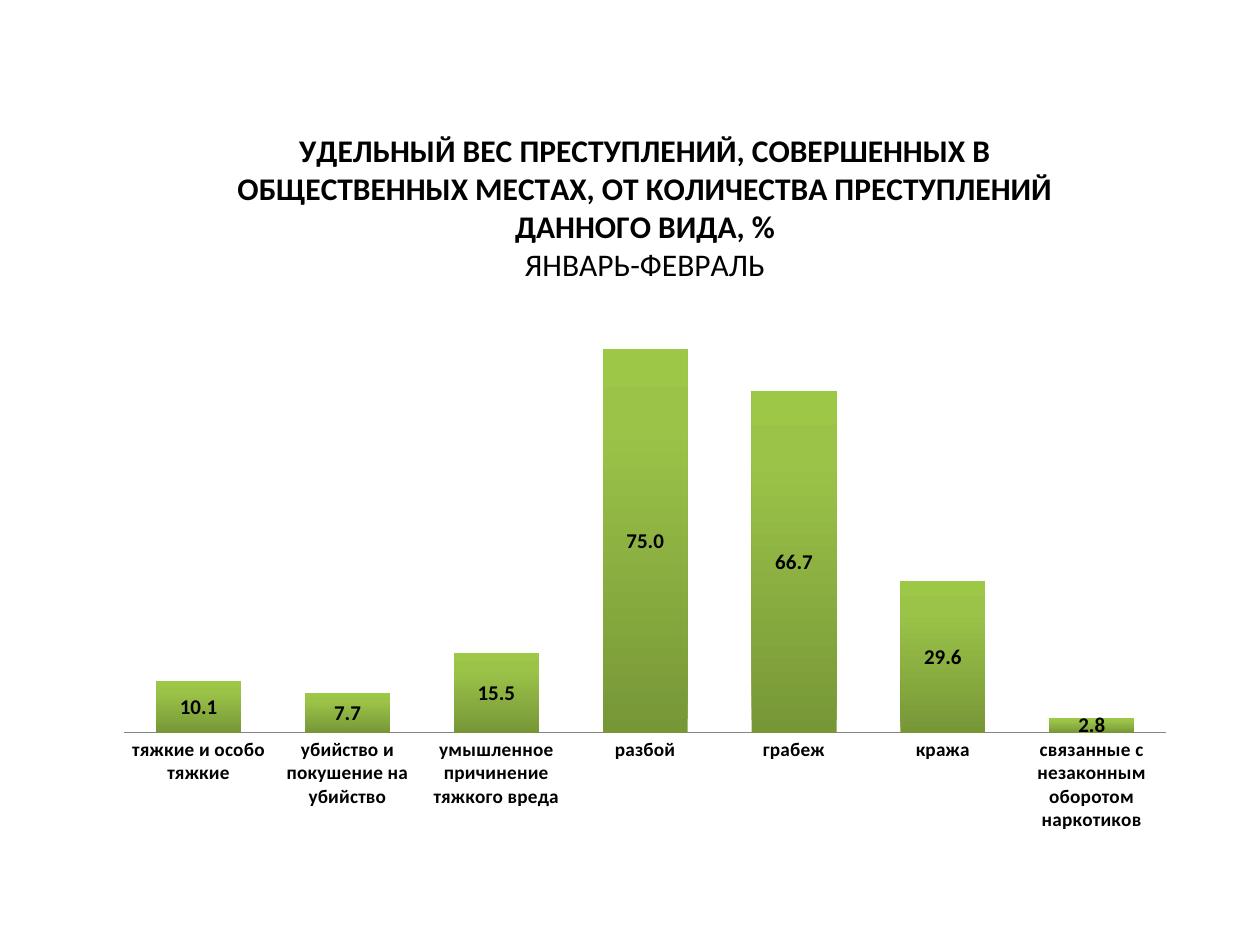
"""Build a slide charting the share of crimes committed in public places."""
import copy
import dataclasses
import typing

import lxml.etree
import pptx
import pptx.chart.chart
import pptx.chart.data
import pptx.chart.series
import pptx.dml.color
import pptx.enum.chart
import pptx.enum.text
import pptx.oxml.ns
import pptx.util

PX = 914400 / 126
FONT = "Calibri"
BLACK = pptx.dml.color.RGBColor(0x00, 0x00, 0x00)
AXIS_GRAY = pptx.dml.color.RGBColor(0x86, 0x86, 0x86)
GREEN_STOPS = (
    (0.0, pptx.dml.color.RGBColor(0x77, 0x97, 0x37)),
    (0.8, pptx.dml.color.RGBColor(0x9B, 0xC3, 0x48)),
    (1.0, pptx.dml.color.RGBColor(0x9D, 0xC7, 0x46)),
)


@dataclasses.dataclass(frozen=True)
class Crime:
    name: str
    share: float


CRIMES = (
    Crime("тяжкие и особо тяжкие", 10.1),
    Crime("убийство и покушение на убийство", 7.7),
    Crime("умышленное причинение тяжкого вреда", 15.5),
    Crime("разбой", 75),
    Crime("грабеж", 66.7),
    Crime("кража", 29.6),
    Crime("связанные с незаконным оборотом наркотиков", 2.8),
)


def px(length: int) -> pptx.util.Emu:
    return pptx.util.Emu(round(length * PX))


def format_font(font: typing.Any, *, size: int, bold: bool = False) -> None:
    font.name = FONT
    font.size = pptx.util.Pt(size)
    font.bold = bold
    font.color.rgb = BLACK


def add_text(paragraph: typing.Any, text: str, *, size: int, bold: bool = False) -> None:
    paragraph.alignment = pptx.enum.text.PP_ALIGN.CENTER
    run = paragraph.add_run()
    run.text = text
    format_font(run.font, size=size, bold=bold)


def set_layout(parent: typing.Any, index: int, **settings: typing.Any) -> None:
    qn = pptx.oxml.ns.qn
    for old_layout in parent.findall(qn("c:layout")):
        parent.remove(old_layout)
    layout = lxml.etree.Element(qn("c:layout"))
    manual = lxml.etree.SubElement(layout, qn("c:manualLayout"))
    for name, value in settings.items():
        lxml.etree.SubElement(manual, qn(f"c:{name}")).set("val", str(value))
    parent.insert(index, layout)


def fill_with_gradient(series: pptx.chart.series.BarSeries) -> None:
    fill = series.format.fill
    fill.gradient()
    fill.gradient_angle = 90
    stop_list = next(series._element.iter(pptx.oxml.ns.qn("a:gsLst")))
    stop_list.append(copy.deepcopy(stop_list[0]))
    for stop, (position, color) in zip(fill.gradient_stops, GREEN_STOPS):
        stop.position = position
        stop.color.rgb = color


def add_title(chart: pptx.chart.chart.Chart) -> None:
    title = chart.chart_title
    frame = title.text_frame
    add_text(
        frame.paragraphs[0],
        "УДЕЛЬНЫЙ ВЕС ПРЕСТУПЛЕНИЙ, СОВЕРШЕННЫХ В ОБЩЕСТВЕННЫХ МЕСТАХ, "
        "ОТ КОЛИЧЕСТВА ПРЕСТУПЛЕНИЙ ДАННОГО ВИДА, %",
        size=18,
        bold=True,
    )
    add_text(frame.add_paragraph(), "ЯНВАРЬ-ФЕВРАЛЬ", size=18)
    set_layout(title._element, 1, xMode="edge", yMode="edge", x=0.12, y=0.04)


def format_axes(chart: pptx.chart.chart.Chart) -> None:
    category_axis = chart.category_axis
    category_axis.major_tick_mark = pptx.enum.chart.XL_TICK_MARK.NONE
    category_axis.has_major_gridlines = False
    category_axis.format.line.color.rgb = AXIS_GRAY
    category_axis.format.line.width = pptx.util.Pt(0.75)
    format_font(category_axis.tick_labels.font, size=11, bold=True)
    value_axis = chart.value_axis
    value_axis.minimum_scale = 0
    value_axis.maximum_scale = 80
    value_axis.has_major_gridlines = False
    value_axis.visible = False


def format_columns(chart: pptx.chart.chart.Chart) -> None:
    plot = chart.plots[0]
    plot.gap_width = 75
    plot.overlap = 100
    plot.vary_by_categories = False
    series = plot.series[0]
    fill_with_gradient(series)
    labels = series.data_labels
    labels.show_value = True
    labels.number_format = "0.0"
    labels.number_format_is_linked = False
    labels.position = pptx.enum.chart.XL_LABEL_POSITION.CENTER
    format_font(labels.font, size=12, bold=True)


def main() -> None:
    presentation = pptx.Presentation()
    presentation.slide_width = px(1260)
    presentation.slide_height = px(945)
    slide = presentation.slides.add_slide(presentation.slide_layouts[6])
    data = pptx.chart.data.CategoryChartData(number_format="0.0")
    data.categories = [crime.name for crime in CRIMES]
    data.add_series("Series 1", [crime.share for crime in CRIMES])
    chart = slide.shapes.add_chart(
        pptx.enum.chart.XL_CHART_TYPE.COLUMN_STACKED,
        px(105), px(96), px(1072), px(745), data,
    ).chart
    format_font(chart.font, size=18)
    chart.has_legend = False
    add_title(chart)
    format_axes(chart)
    format_columns(chart)
    plot_area = next(chart._chartSpace.iter(pptx.oxml.ns.qn("c:plotArea")))
    set_layout(
        plot_area, 0, layoutTarget="inner", xMode="edge", yMode="edge",
        x=0.018, y=0.305, w=0.972, h=0.55,
    )
    presentation.save("out.pptx")


if __name__ == "__main__":
    main()
